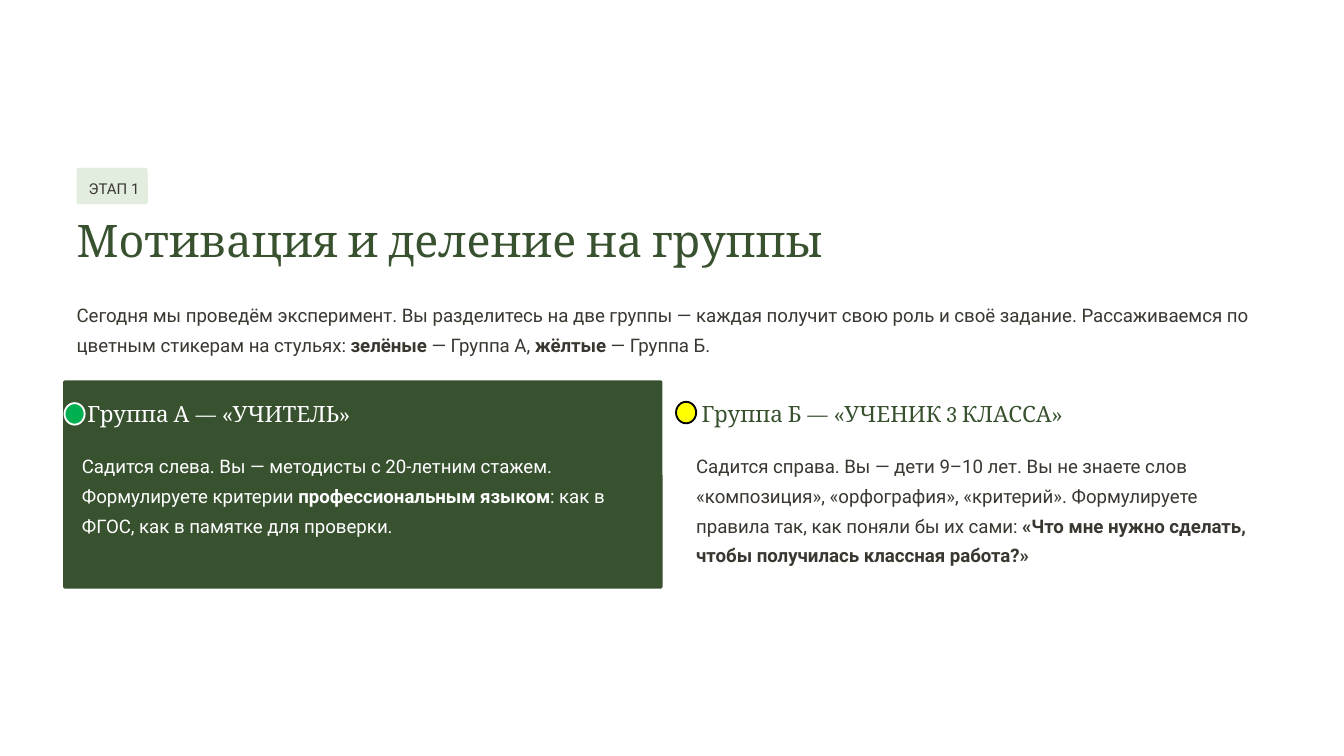
from dataclasses import dataclass

from pptx import Presentation
from pptx.dml.color import RGBColor
from pptx.enum.shapes import MSO_SHAPE as Shape
from pptx.enum.text import MSO_ANCHOR as Anchor
from pptx.util import Inches, Pt

GREEN, PALE_GREEN, INK, WHITE = "38512F", "E2ECDF", "3A3630", "FFFFFF"
SERIF, SANS = "Cambria", "Roboto"
HEADING_SPACING, BODY_SPACING = 25 / 24, 4 / 3


@dataclass(frozen=True)
class Box:
    left: float
    top: float
    width: float
    height: float

    def lengths(self) -> list[Inches]:
        return [Inches(n) for n in (self.left, self.top, self.width, self.height)]


@dataclass(frozen=True)
class TextStyle:
    font: str
    size: float
    color: str
    spacing: float


@dataclass(frozen=True)
class Group:
    left: float
    heading: str
    heading_color: str
    heading_width: float
    body: list[str]
    body_color: str
    body_width: float
    body_height: float
    sticker: Box
    sticker_fill: str
    sticker_line: str


def color(value: str) -> RGBColor:
    return RGBColor.from_string(value)


def add_filled(slide, kind: Shape, box: Box, fill: str):
    shape = slide.shapes.add_shape(kind, *box.lengths())
    shape.shadow.inherit = False
    shape.fill.solid()
    shape.fill.fore_color.rgb = color(fill)
    shape.line.fill.background()
    return shape


def add_panel(slide, box: Box, fill: str, rounding: float) -> None:
    add_filled(slide, Shape.ROUNDED_RECTANGLE, box, fill).adjustments[0] = rounding


def add_text(slide, box: Box, parts: list[str], style: TextStyle) -> None:
    """Write the parts as one paragraph; every second part is bold."""
    text_frame = slide.shapes.add_textbox(*box.lengths()).text_frame
    text_frame.word_wrap = True
    text_frame.vertical_anchor = Anchor.TOP
    text_frame.margin_left = text_frame.margin_right = 0
    text_frame.margin_top = text_frame.margin_bottom = 0
    paragraph = text_frame.paragraphs[0]
    paragraph.line_spacing = style.spacing
    for index, part in enumerate(parts):
        run = paragraph.add_run()
        run.text = part
        run.font.name = style.font
        run.font.size = Pt(style.size)
        run.font.bold = index % 2 == 1
        run.font.color.rgb = color(style.color)


def add_group(slide, group: Group) -> None:
    add_text(slide, Box(group.left + 0.04, 2.97, group.heading_width, 0.22), [group.heading],
             TextStyle(SERIF, 12, group.heading_color, HEADING_SPACING))
    add_text(slide, Box(group.left, 3.33, group.body_width, group.body_height),
             group.body, TextStyle(SANS, 10, group.body_color, BODY_SPACING))
    sticker = add_filled(slide, Shape.FLOWCHART_CONNECTOR, group.sticker, group.sticker_fill)
    sticker.line.color.rgb = color(group.sticker_line)
    sticker.line.width = Pt(1)


GROUPS = [
    Group(0.61, "Группа А — «УЧИТЕЛЬ»", WHITE, 2.67,
          ["Садится слева. Вы — методисты с 20-летним стажем. Формулируете критерии ",
           "профессиональным языком", ": как в ФГОС, как в памятке для проверки."],
          WHITE, 4.17, 0.69, Box(0.48, 3, 0.15, 0.16), "00B050", WHITE),
    Group(5.18, "Группа Б — «УЧЕНИК 3 КЛАССА»", GREEN, 3.45,
          ["Садится справа. Вы — дети 9–10 лет. Вы не знаете слов «композиция», "
           "«орфография», «критерий». Формулируете правила так, как поняли бы их сами: ",
           "«Что мне нужно сделать, чтобы получилась классная работа?»"],
          INK, 4.25, 0.92, Box(5.03, 2.99, 0.15, 0.16), "FFFF00", "000000"),
]


def main() -> None:
    presentation = Presentation()
    presentation.slide_width = Inches(10)
    presentation.slide_height = Inches(10 * 9 / 16)
    slide = presentation.slides.add_slide(presentation.slide_layouts[6])

    add_panel(slide, Box(0.57, 1.25, 0.53, 0.27), PALE_GREEN, 0.07)
    add_text(slide, Box(0.66, 1.29, 0.86, 0.18), ["ЭТАП 1"],
             TextStyle(SANS, 8, INK, BODY_SPACING))
    add_text(slide, Box(0.57, 1.57, 5.84, 0.42), ["Мотивация и деление на группы"],
             TextStyle(SERIF, 24, GREEN, HEADING_SPACING))
    add_text(slide, Box(0.57, 2.21, 8.85, 0.46),
             ["Сегодня мы проведём эксперимент. Вы разделитесь на две группы — каждая "
              "получит свою роль и своё задание. Рассаживаемся по цветным стикерам "
              "на стульях: ", "зелёные ", "— Группа А, ", "жёлтые ", "— Группа Б."],
             TextStyle(SANS, 10, INK, BODY_SPACING))
    add_panel(slide, Box(0.47, 2.83, 4.46, 1.55), GREEN, 0.01)
    for group in GROUPS:
        add_group(slide, group)

    presentation.save("out.pptx")


if __name__ == "__main__":
    main()
